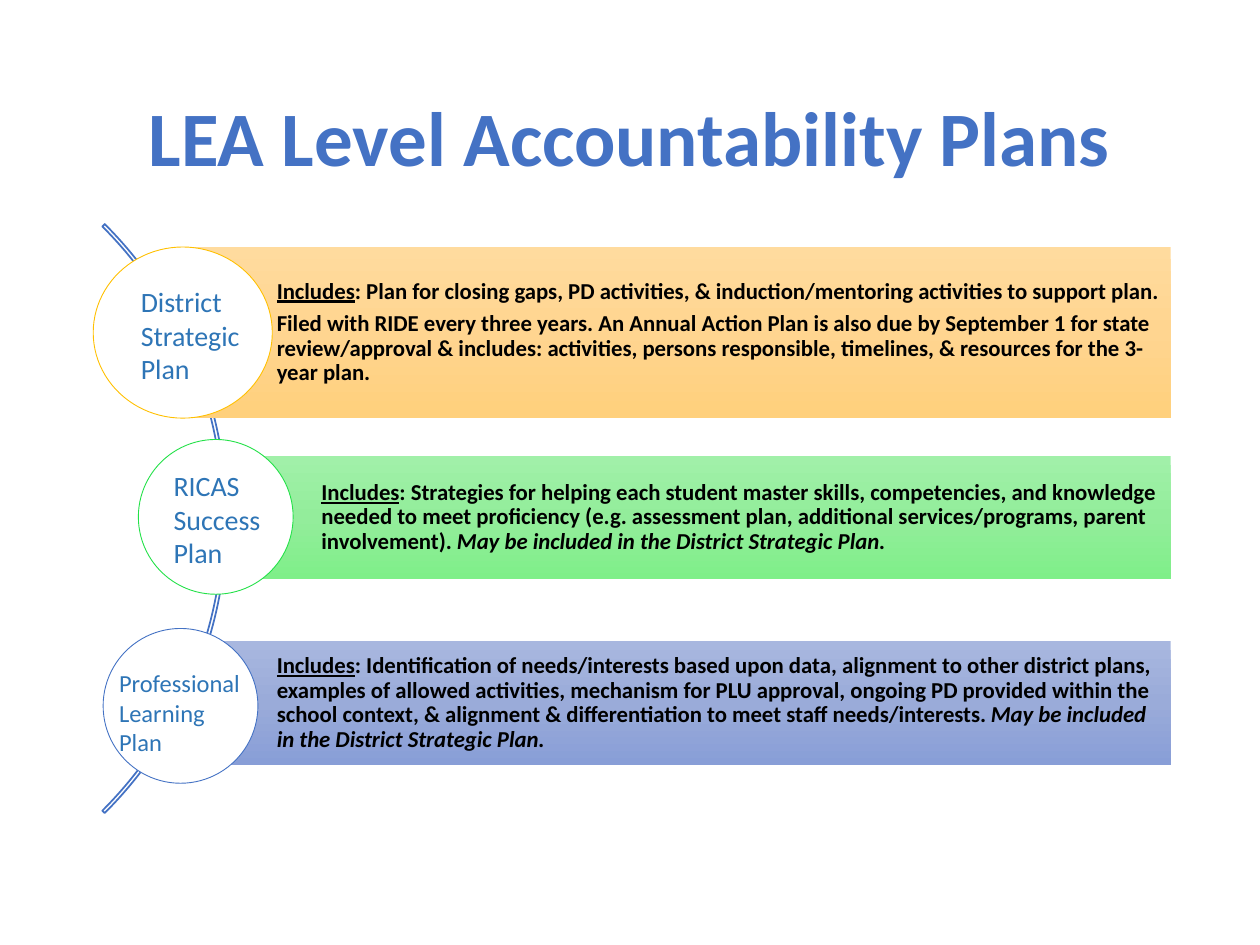
import copy

import pptx
import pptx.dml.color
import pptx.enum.shapes
import pptx.enum.text
import pptx.oxml.ns
import pptx.util
from pptx.util import Cm

SHAPES = pptx.enum.shapes.MSO_SHAPE
ALIGN = pptx.enum.text.PP_ALIGN
ANCHOR = pptx.enum.text.MSO_ANCHOR
FONT = "Calibri"
BLUE = "4472C4"
LABEL_BLUE = "2E75B6"
BAR_RIGHT = 23.6
OPTIONAL = "May be included in the District Strategic Plan."

# Each plan: bar (left, top, height), gradient, circle (box, outline),
# label (box, left inset, size, paragraphs), description paragraphs of (text, format) runs
PLANS = [
    {
        "bar": (3.6, 4.98, 3.45),
        "gradient": ("FFDB9E", "FFD590", "FFD07C"),
        "circle": ((1.88, 4.98, 3.61, 3.45), "FFC000"),
        "label": ((2.59, 5.61, 2.54, 2.31), 0.25, 16, ["District Strategic Plan"]),
        "description": [
            [("Includes", {"underline": True}),
             (": Plan for closing gaps, PD activities, & induction/mentoring "
              "activities to support plan.", {})],
            [("Filed with RIDE every three years. An Annual Action Plan is also due by "
              "September 1 for state review/approval & includes: activities, persons "
              "responsible, timelines, & resources for the 3-year plan.", {})],
        ],
    },
    {
        "bar": (4.5, 9.19, 2.49),
        "gradient": ("A1F0A9", "93ED9B", "7FEF89"),
        "circle": ((2.79, 8.86, 3.12, 3.12), "23E148"),
        "label": ((3.25, 9.32, 2.31, 2.31), 0.25, 16, ["RICAS Success Plan"]),
        "description": [
            [("Includes", {"underline": True}),
             (": Strategies for helping each student master skills, competencies, and "
              "knowledge needed to meet proficiency (e.g. assessment plan, additional "
              "services/programs, parent involvement). ", {}),
             (OPTIONAL, {"italic": True})],
        ],
    },
    {
        "bar": (3.6, 12.93, 2.49),
        "gradient": ("A8B7DF", "9AABD9", "889ED7"),
        "circle": ((2.08, 12.67, 3.12, 3.12), BLUE),
        "label": ((2.03, 13.34, 3.07, 2.06), 0.37, 14, ["Professional", "Learning", "Plan"]),
        "description": [
            [("Includes", {"underline": True}),
             (": Identification of needs/interests based upon data, alignment to other "
              "district plans, examples of allowed activities, mechanism for PLU approval, "
              "ongoing PD provided within the school context, & alignment & "
              "differentiation to meet staff needs/interests. ", {}),
             (OPTIONAL, {"italic": True})],
        ],
    },
]


def color(hex_string):
    return pptx.dml.color.RGBColor.from_string(hex_string)


def write_text(frame, paragraphs, size, font_color, bold=False, align=ALIGN.LEFT,
               anchor=ANCHOR.TOP, line_spacing=1.0, space_after=0,
               insets=(0.25, 0.13, 0.25, 0.13)):
    """Fill a text frame; a paragraph is a string or a list of (text, format) runs."""
    frame.word_wrap = True
    frame.vertical_anchor = anchor
    (frame.margin_left, frame.margin_top,
     frame.margin_right, frame.margin_bottom) = map(Cm, insets)
    for index, runs in enumerate(paragraphs):
        paragraph = frame.add_paragraph() if index else frame.paragraphs[0]
        paragraph.alignment = align
        paragraph.line_spacing = line_spacing
        paragraph.space_after = pptx.util.Pt(space_after)
        for text, style in [(runs, {})] if isinstance(runs, str) else runs:
            run = paragraph.add_run()
            run.text = text
            run.font.name = FONT
            run.font.size = pptx.util.Pt(size)
            run.font.bold = bold
            run.font.color.rgb = color(font_color)
            for name, value in style.items():
                setattr(run.font, name, value)


def add_text(slide, box, paragraphs, **text_format):
    shape = slide.shapes.add_textbox(*map(Cm, box))
    write_text(shape.text_frame, paragraphs, **text_format)


def add_shape(slide, kind, box, fill=None, line=None, line_width=1.0):
    shape = slide.shapes.add_shape(kind, *map(Cm, box))
    shape.shadow.inherit = False
    if fill:
        shape.fill.solid()
        shape.fill.fore_color.rgb = color(fill)
    else:
        shape.fill.background()
    if line:
        shape.line.color.rgb = color(line)
        shape.line.width = pptx.util.Pt(line_width)
    else:
        shape.line.fill.background()
    return shape


def set_gradient(shape, colors):
    """Fill from top to bottom with three evenly placed colours."""
    shape.fill.gradient()
    shape.fill.gradient_angle = 270
    stop_list = shape.element.spPr.find(".//" + pptx.oxml.ns.qn("a:gsLst"))
    stop_list.insert(1, copy.deepcopy(stop_list[0]))
    for index, (stop, stop_color) in enumerate(zip(shape.fill.gradient_stops, colors)):
        stop.position = index / 2
        stop.color.rgb = color(stop_color)


def add_arc(slide):
    arc = add_shape(slide, SHAPES.BLOCK_ARC, (-12.22, 2.06, 16.79, 16.79), line=BLUE)
    for index, value in enumerate((189, 27, 0.004)):
        arc.adjustments[index] = value


def add_plan(slide, plan):
    # Bar with its description
    left, top, height = plan["bar"]
    bar = add_shape(slide, SHAPES.RECTANGLE, (left, top, BAR_RIGHT - left, height))
    set_gradient(bar, plan["gradient"])
    write_text(bar.text_frame, plan["description"], size=13, font_color="000000",
               bold=True, anchor=ANCHOR.MIDDLE, line_spacing=0.9, space_after=4.5,
               insets=(1.98, 0.1, 0.1, 0.1))

    # Circle with its label
    circle_box, outline = plan["circle"]
    add_shape(slide, SHAPES.OVAL, circle_box, fill="FFFFFF", line=outline, line_width=0.5)
    label_box, inset, size, lines = plan["label"]
    add_text(slide, label_box, lines, size=size, font_color=LABEL_BLUE,
             insets=(inset, 0.13, 0.13, 0.13))


def main():
    presentation = pptx.Presentation()
    presentation.slide_width = Cm(25.4)
    presentation.slide_height = Cm(19.05)
    slide = presentation.slides.add_slide(presentation.slide_layouts[6])

    # Title
    add_text(slide, (1.75, 1.02, 21.9, 3.68), ["LEA Level Accountability Plans"], size=44,
             font_color=BLUE, bold=True, align=ALIGN.CENTER, anchor=ANCHOR.MIDDLE,
             line_spacing=0.9)

    # Arc behind the three plans
    add_arc(slide)
    for plan in PLANS:
        add_plan(slide, plan)

    presentation.save("out.pptx")


if __name__ == "__main__":
    main()
